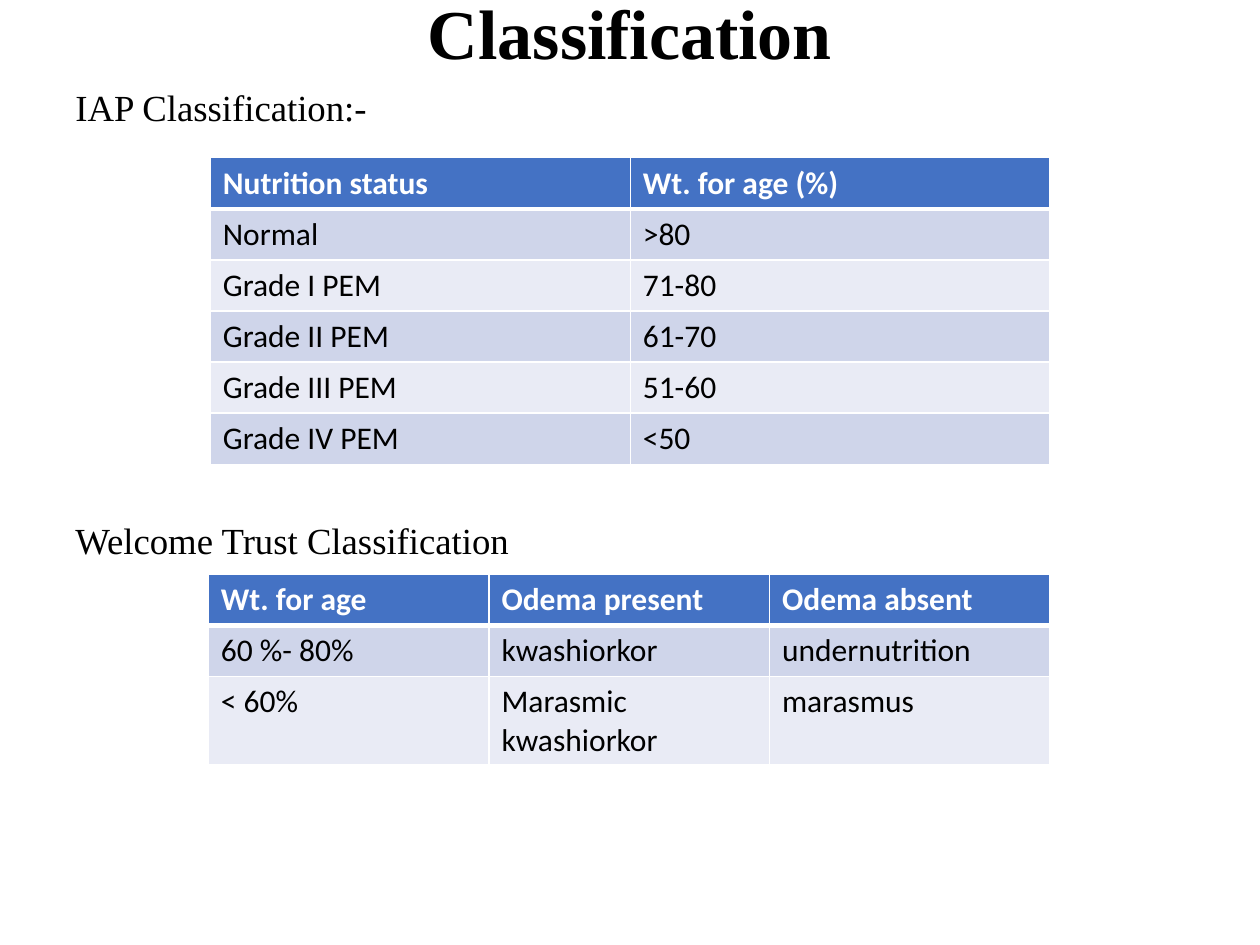
from lxml.etree import SubElement
from pptx import Presentation
from pptx.dml.color import RGBColor
from pptx.enum.text import MSO_ANCHOR, PP_ALIGN
from pptx.oxml.ns import qn
from pptx.util import Cm, Pt


def color(value):
    """Turn a hex string into a colour."""
    return RGBColor.from_string(value)


class ClassificationSlide:
    """Hold the style and the current slide, and draw its elements."""

    heading = {"name": "Times New Roman", "size": Pt(21), "bold": False}
    title = {"name": "Times New Roman", "size": Pt(40), "bold": True}
    header_cell = {"name": "Calibri", "size": Pt(18), "bold": True}
    body_cell = {"name": "Calibri", "size": Pt(18), "bold": False}
    header_fill = "4472C4"
    band_fills = ("E9EBF5", "CFD5EA")
    row_height = Cm(1.03)

    def __init__(self, deck):
        """Add a blank page to the deck."""
        self.page = deck.slides.add_slide(deck.slide_layouts[6])

    def add_span(self, para, text, style, ink="000000"):
        """Put one formatted span in a paragraph."""
        span = para.add_run()
        span.text = text
        for name, value in style.items():
            setattr(span.font, name, value)
        span.font.color.rgb = color(ink)

    def add_text(self, text, area, style, anchor=MSO_ANCHOR.TOP, **layout):
        """Add a text box with a single paragraph."""
        box = self.page.shapes.add_textbox(*map(Cm, area))
        frame = box.text_frame
        frame.word_wrap = True
        frame.vertical_anchor = anchor
        para = frame.paragraphs[0]
        for name, value in layout.items():
            setattr(para, name, value)
        self.add_span(para, text, style)

    def add_border(self, cell, side, width):
        """Draw one white edge of a cell."""
        line = SubElement(cell._tc.get_or_add_tcPr(), qn(f"a:ln{side}"), w=str(Pt(width)))
        fill = SubElement(line, qn("a:solidFill"))
        SubElement(fill, qn("a:srgbClr"), val="FFFFFF")

    def add_table(self, rows, left, top, width):
        """Add a banded table with a header row and equal columns."""
        frame = self.page.shapes.add_table(
            len(rows), len(rows[0]), Cm(left), Cm(top), Cm(width), self.row_height * len(rows))
        grid = frame.table
        for row in grid.rows:
            row.height = self.row_height
        for i, row in enumerate(rows):
            for j, text in enumerate(row):
                cell = grid.cell(i, j)
                widths = {"L": 1, "R": 1, "T": 3 if i == 1 else 1, "B": 3 if i == 0 else 1}
                for side, size in widths.items():
                    self.add_border(cell, side, size)
                cell.fill.solid()
                cell.fill.fore_color.rgb = color(self.band_fills[i % 2] if i else self.header_fill)
                style, ink = (self.body_cell, "000000") if i else (self.header_cell, "FFFFFF")
                self.add_span(cell.text_frame.paragraphs[0], text, style, ink)


def main():
    """Build and save the deck."""
    deck = Presentation()
    deck.slide_width, deck.slide_height = Cm(25.4), Cm(19.05)
    slide = ClassificationSlide(deck)
    slide.add_text("Classification", (0, 0, 25.4, 1.48), slide.title,
                   anchor=MSO_ANCHOR.MIDDLE, alignment=PP_ALIGN.CENTER, line_spacing=0.9)
    slide.add_text("IAP Classification:-", (1.27, 1.69, 22.86, 15.32), slide.heading,
                   line_spacing=0.9)
    slide.add_table([
        ("Nutrition status", "Wt. for age (%)"),
        ("Normal", ">80"),
        ("Grade I PEM", "71-80"),
        ("Grade II PEM", "61-70"),
        ("Grade III PEM", "51-60"),
        ("Grade IV PEM", "<50"),
    ], 4.24, 3.18, 16.93)
    slide.add_text("Welcome Trust Classification", (1.27, 10.32, 10.58, 1.14), slide.heading)
    slide.add_table([
        ("Wt. for age", "Odema present", "Odema absent"),
        ("60 %- 80%", "kwashiorkor", "undernutrition"),
        ("< 60%", "Marasmic kwashiorkor", "marasmus"),
    ], 4.2, 11.58, 16.97)
    deck.save("out.pptx")


if __name__ == "__main__":
    main()
